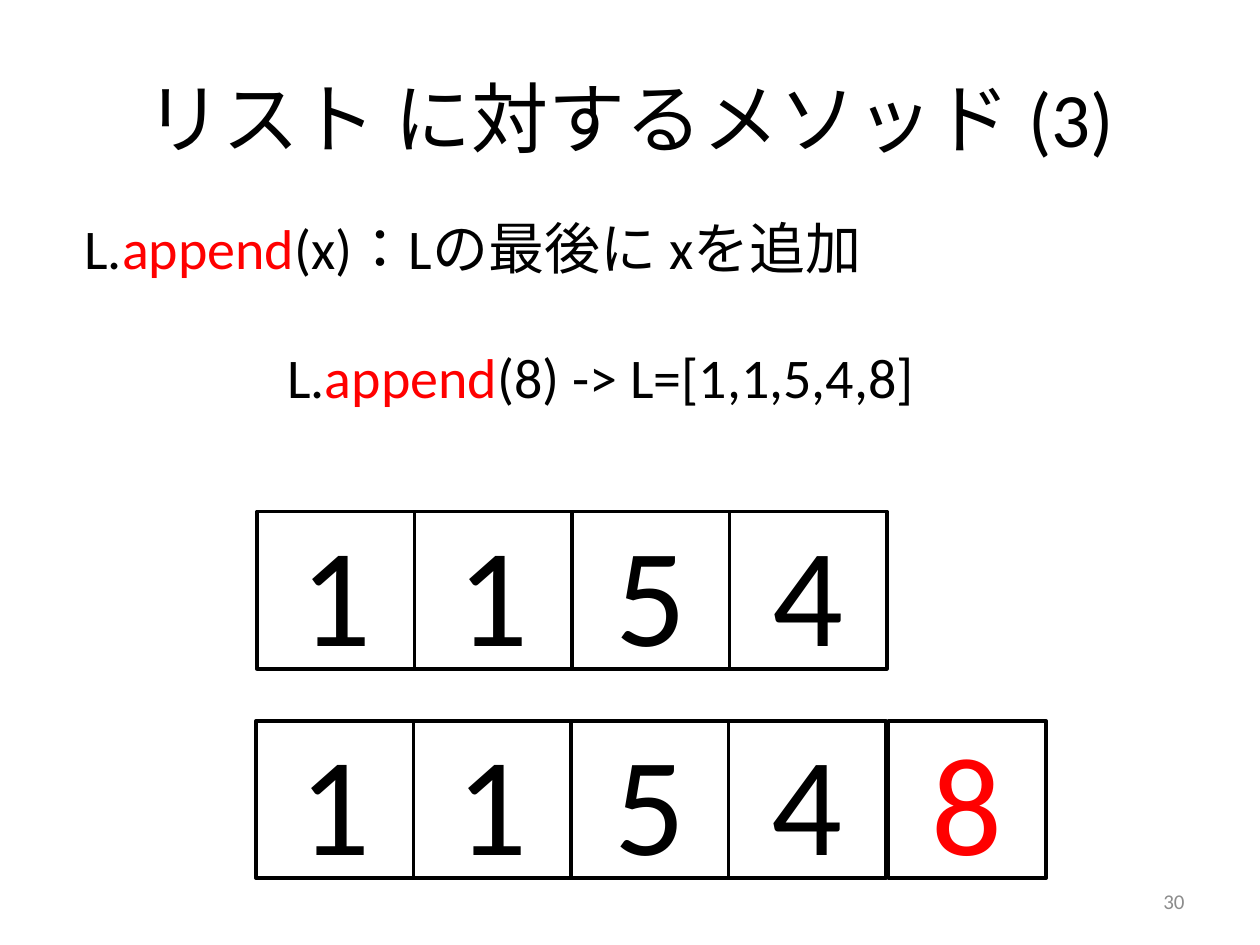
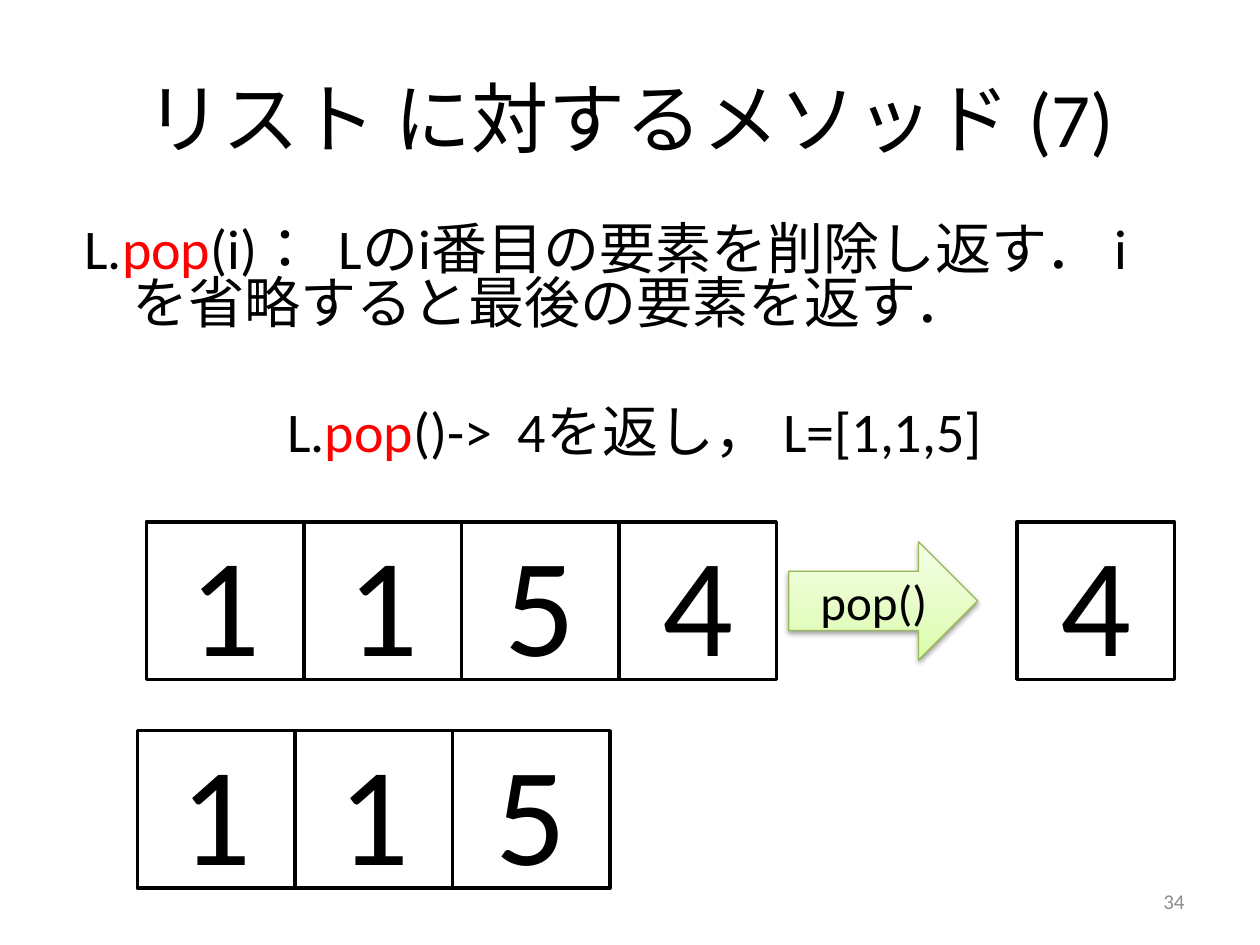
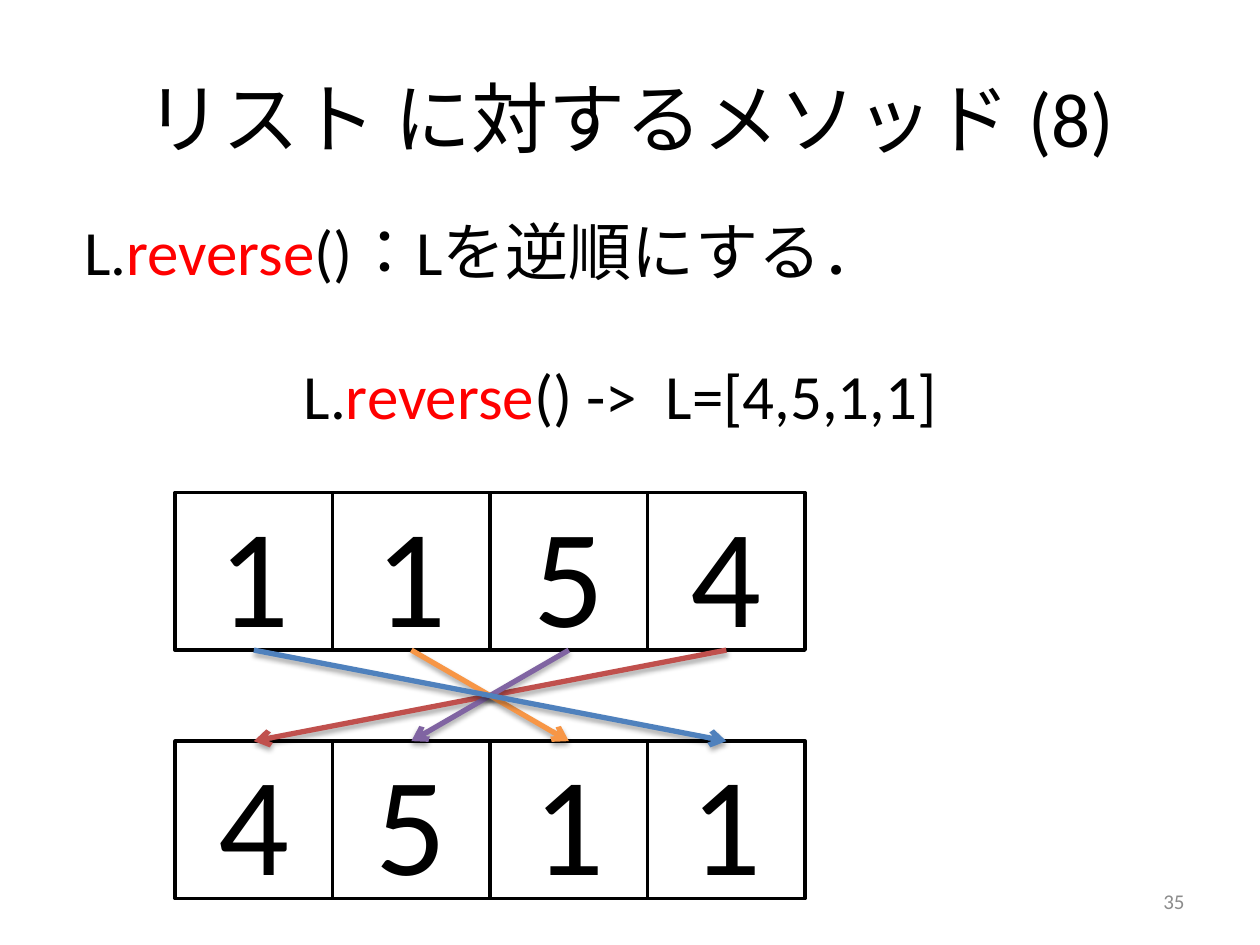
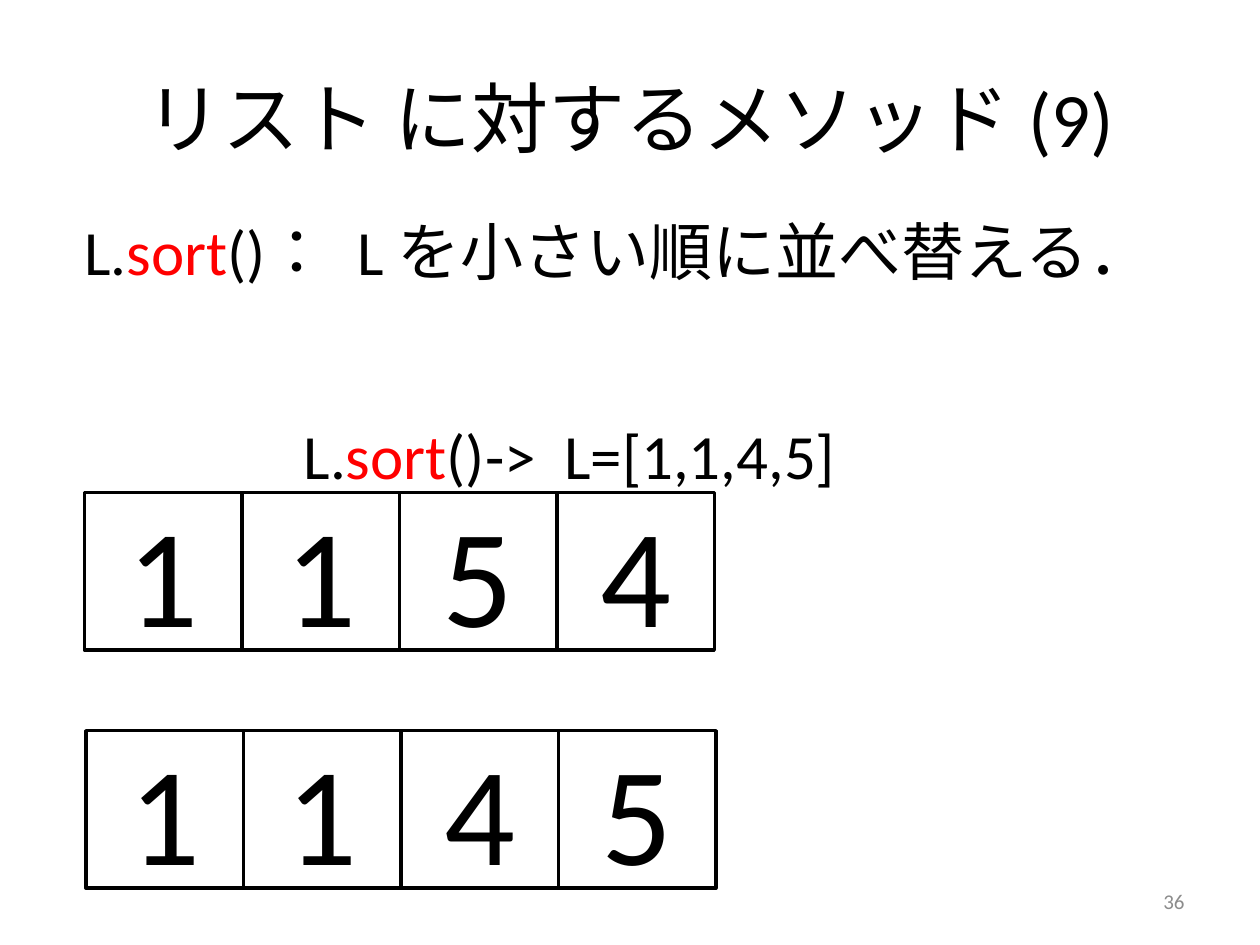
import copy

import pptx
import pptx.dml.color
import pptx.enum.lang
import pptx.enum.shapes
import pptx.enum.text
import pptx.oxml
import pptx.oxml.ns
import pptx.util
from pptx.dml.color import RGBColor
from pptx.util import Cm

FONT = "Calibri"
BLACK = RGBColor(0x00, 0x00, 0x00)
WHITE = RGBColor(0xFF, 0xFF, 0xFF)
RED = RGBColor(0xFF, 0x00, 0x00)
GRAY = RGBColor(0x8C, 0x8C, 0x8C)
ARROW_EDGE = RGBColor(0x98, 0xB9, 0x55)
ARROW_GRADIENT = [
    (0, RGBColor(0xDA, 0xFD, 0xA7)),
    (0.35, RGBColor(0xE4, 0xFC, 0xC2)),
    (1, RGBColor(0xF5, 0xFF, 0xE7)),
]
CROSSING_COLORS = [
    RGBColor(0xC0, 0x50, 0x4D),
    RGBColor(0x80, 0x64, 0xA2),
    RGBColor(0xF7, 0x96, 0x46),
    RGBColor(0x4F, 0x81, 0xBD),
]
CELL = 3.175
HANGING = 0.97
LEFT = pptx.enum.text.PP_ALIGN.LEFT
CENTER = pptx.enum.text.PP_ALIGN.CENTER
RIGHT = pptx.enum.text.PP_ALIGN.RIGHT


def style_paragraph(paragraph, size, color, alignment):
    """Set the font and alignment that a whole paragraph shares."""
    paragraph.alignment = alignment
    paragraph.font.name = FONT
    paragraph.font.size = pptx.util.Pt(size)
    paragraph.font.color.rgb = color
    paragraph.font.language_id = pptx.enum.lang.MSO_LANGUAGE_ID.JAPANESE


def write_text(shape, text, size, color=BLACK, alignment=CENTER):
    """Write one vertically centred paragraph into a shape."""
    frame = shape.text_frame
    frame.word_wrap = True
    frame.vertical_anchor = pptx.enum.text.MSO_ANCHOR.MIDDLE
    frame.text = text
    style_paragraph(frame.paragraphs[0], size, color, alignment)


def add_text_box(slide, left, top, width, height):
    """Add an empty text box placed in centimetres."""
    return slide.shapes.add_textbox(Cm(left), Cm(top), Cm(width), Cm(height))


def add_method_line(paragraph, method, rest, size, margin, indent):
    """Write a call on L with the method name in red."""
    style_paragraph(paragraph, size, BLACK, LEFT)
    paragraph.line_spacing = 0.8
    properties = paragraph._p.get_or_add_pPr()
    properties.set("marL", str(Cm(margin)))
    properties.set("indent", str(Cm(indent)))
    for text in ("L.", method, rest):
        run = paragraph.add_run()
        run.text = text
        if text == method:
            run.font.color.rgb = RED


def add_method_slide(presentation, number, page, method, meaning, example, size, margin, gap):
    """Add a slide with title, method description, example and page number."""
    slide = presentation.slides.add_slide(presentation.slide_layouts[6])
    title = add_text_box(slide, 1.27, 0.76, 22.86, 3.18)
    write_text(title, f"リスト に対するメソッド ({number})", 44)
    frame = add_text_box(slide, 1.45, 4.45, 22.45, 5.08).text_frame
    frame.word_wrap = True
    add_method_line(frame.paragraphs[0], method, meaning, size, HANGING, -HANGING)
    example_line = frame.add_paragraph()
    add_method_line(example_line, method, example, size, margin, 0)
    example_line.space_before = pptx.util.Pt(gap)
    page_box = add_text_box(slide, 18.21, 17.65, 5.92, 1.02)
    write_text(page_box, str(page), 12, GRAY, RIGHT)
    return slide


def add_cell(slide, value, left, top, color=BLACK):
    """Add one square list cell."""
    cell = slide.shapes.add_shape(
        pptx.enum.shapes.MSO_SHAPE.RECTANGLE, Cm(left), Cm(top), Cm(CELL), Cm(CELL))
    cell.fill.solid()
    cell.fill.fore_color.rgb = WHITE
    cell.line.color.rgb = BLACK
    cell.line.width = pptx.util.Pt(2)
    cell.shadow.inherit = False
    write_text(cell, str(value), 80, color)
    return cell


def add_list(slide, values, left, top):
    """Add a row of adjoining cells, one for each value."""
    return [add_cell(slide, value, left + i * CELL, top) for i, value in enumerate(values)]


def add_shadow(shape, opacity, distance):
    """Give a shape or connector a soft shadow straight below it."""
    shape.element.spPr.append(pptx.oxml.parse_xml(
        f'<a:effectLst {pptx.oxml.ns.nsdecls("a")}>'
        f'<a:outerShdw blurRad="{pptx.util.Pt(3.1)}" dist="{pptx.util.Pt(distance)}" '
        'dir="5400000" rotWithShape="0"><a:srgbClr val="000000">'
        f'<a:alpha val="{opacity * 1000}"/></a:srgbClr></a:outerShdw></a:effectLst>'))


def add_block_arrow(slide, text, left, top, width, height):
    """Add a green gradient arrow with a label."""
    arrow = slide.shapes.add_shape(
        pptx.enum.shapes.MSO_SHAPE.RIGHT_ARROW, Cm(left), Cm(top), Cm(width), Cm(height))
    arrow.fill.gradient()
    arrow.fill.gradient_angle = 90
    stop_list = arrow.element.spPr.find(".//" + pptx.oxml.ns.qn("a:gsLst"))
    stop_list.append(copy.deepcopy(stop_list[0]))
    for stop, (position, color) in zip(arrow.fill.gradient_stops, ARROW_GRADIENT):
        stop.position = position
        stop.color.rgb = color
    arrow.line.color.rgb = ARROW_EDGE
    arrow.line.width = pptx.util.Pt(0.75)
    add_shadow(arrow, 38, 1.6)
    write_text(arrow, text, 28)


def connect_cells(slide, start, end, color):
    """Draw an arrow from the bottom of one cell to the top of another."""
    connector = slide.shapes.add_connector(pptx.enum.shapes.MSO_CONNECTOR.STRAIGHT, 0, 0, 0, 0)
    connector.begin_connect(start, 2)
    connector.end_connect(end, 0)
    connector.line.color.rgb = color
    connector.line.width = pptx.util.Pt(3)
    connector.line._get_or_add_ln().append(
        pptx.oxml.parse_xml(f'<a:tailEnd {pptx.oxml.ns.nsdecls("a")} type="arrow"/>'))
    add_shadow(connector, 35, 1.8)


def main():
    """Build the four list method slides."""
    presentation = pptx.Presentation()
    presentation.slide_width = Cm(25.4)
    presentation.slide_height = Cm(19.05)
    numbers = [1, 1, 5, 4]

    append_slide = add_method_slide(
        presentation, 3, 30, "append", "(x)：Lの最後に xを追加",
        "(8) -> L=[1,1,5,4,8]", 32, 4.09, 43)
    add_list(append_slide, numbers, 5.18, 10.31)
    add_list(append_slide, numbers, 5.16, 14.53)
    add_cell(append_slide, 8, 17.91, 14.53, RED)

    pop_slide = add_method_slide(
        presentation, 7, 34, "pop",
        "(i)：  Lのi番目の要素を削除し返す． iを省略すると最後の要素を返す．",
        "()->  4を返し， L=[1,1,5]", 32, 4.09, 43)
    add_list(pop_slide, numbers, 2.95, 10.52)
    add_list(pop_slide, numbers[:-1], 2.77, 14.73)
    add_cell(pop_slide, numbers[-1], 20.5, 10.52)
    add_block_arrow(pop_slide, " pop()", 15.9, 10.92, 3.81, 2.39)

    reverse_slide = add_method_slide(
        presentation, 8, 35, "reverse", "()：Lを逆順にする．",
        "() ->  L=[4,5,1,1]", 36, 4.42, 48)
    before = add_list(reverse_slide, numbers, 3.53, 9.93)
    after = add_list(reverse_slide, numbers[::-1], 3.53, 14.94)
    for start, end, color in zip(reversed(before), after, CROSSING_COLORS):
        connect_cells(reverse_slide, start, end, color)

    sort_slide = add_method_slide(
        presentation, 9, 36, "sort", "()：  L を小さい順に並べ替える．",
        "()->  L=[1,1,4,5]", 36, 4.42, 82)
    add_list(sort_slide, numbers, 1.7, 9.93)
    add_list(sort_slide, sorted(numbers), 1.73, 14.73)

    presentation.save("out.pptx")


if __name__ == "__main__":
    main()
